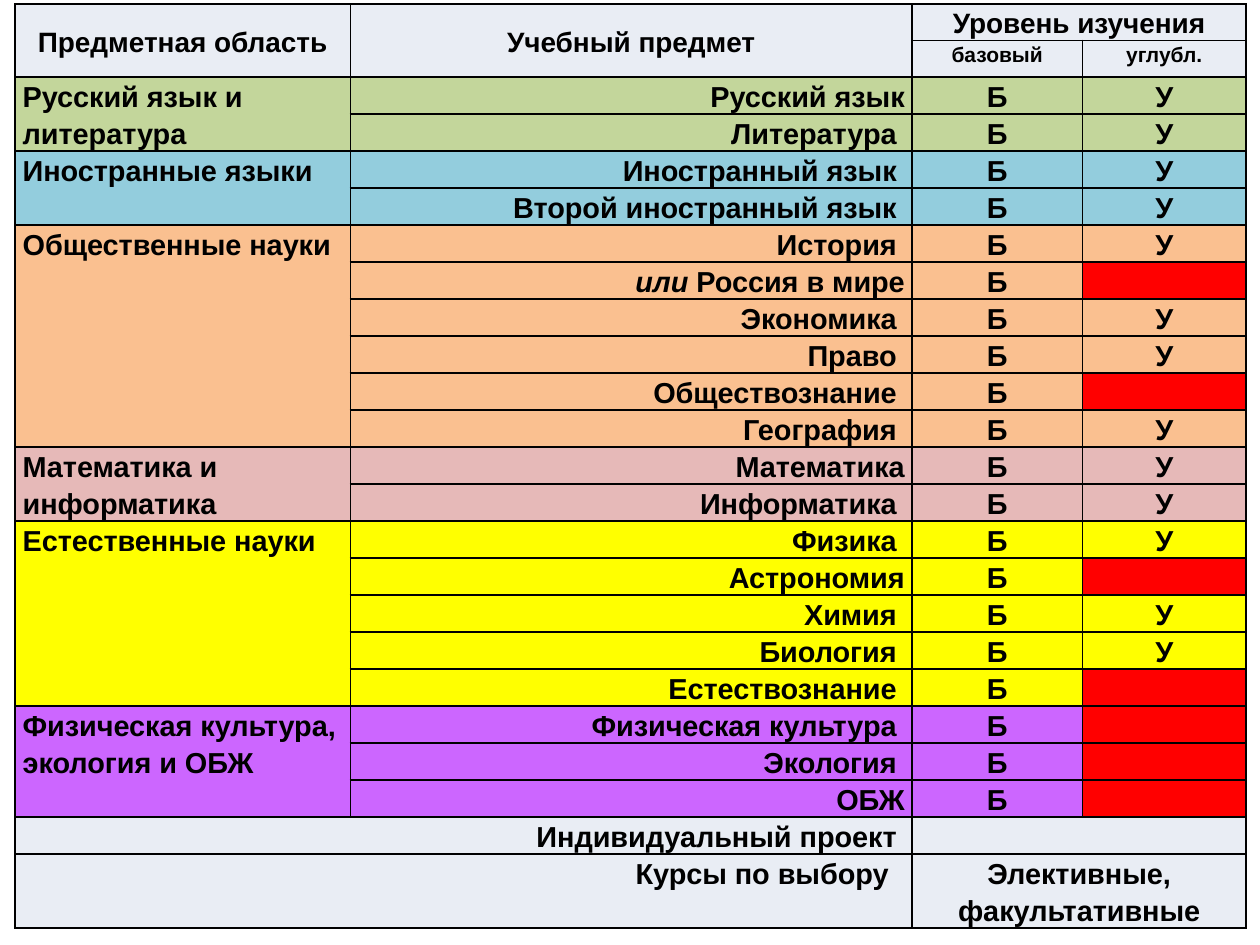
from lxml import etree
from pptx import Presentation
from pptx import util as u
from pptx.dml.color import RGBColor
from pptx.enum import text
from pptx.oxml import ns

COLORS = {
    "ink": "000000", "plain": "E9EDF4", "blocked": "FF0000",
    "green": "C3D69B", "blue": "93CDDD", "orange": "FAC090",
    "rose": "E6B9B8", "yellow": "FFFF00", "violet": "CC66FF",
}
FONT = "Arial"
BODY, HEADING, SMALL = 16.5, 16, 12
COLUMN_SHARES = (0.266, 0.446, 0.135, 0.13)
ROW_HEIGHT = 0.29
LEFT, CENTER, RIGHT = (text.PP_ALIGN.LEFT, text.PP_ALIGN.CENTER, text.PP_ALIGN.RIGHT)

AREAS = [
    ("Русский язык и литература", "green",
     [("Русский язык", "У"), ("Литература ", "У")]),
    ("Иностранные языки", "blue",
     [("Иностранный язык ", "У"), ("Второй иностранный язык ", "У")]),
    ("Общественные науки", "orange",
     [("История ", "У"), ("или| Россия в мире", ""), ("Экономика ", "У"),
      ("Право ", "У"), ("Обществознание ", ""), ("География ", "У")]),
    ("Математика и информатика", "rose",
     [("Математика", "У"), ("Информатика ", "У")]),
    ("Естественные науки", "yellow",
     [("Физика ", "У"), ("Астрономия", ""), ("Химия ", "У"),
      ("Биология ", "У"), ("Естествознание ", "")]),
    ("Физическая культура,\nэкология и ОБЖ", "violet",
     [("Физическая культура ", ""), ("Экология ", ""), ("ОБЖ", "")]),
]


def style_cell(cell, fill):
    """Give a cell its fill, insets, thin black borders and a compact empty line."""
    cell.fill.solid()
    cell.fill.fore_color.rgb = RGBColor.from_string(COLORS[fill])
    cell.margin_left = cell.margin_right = u.Inches(0.06)
    cell.margin_top = cell.margin_bottom = 0
    properties = cell._tc.get_or_add_tcPr()
    for index, side in enumerate(("lnL", "lnR", "lnT", "lnB")):
        line = etree.Element(ns.qn(f"a:{side}"), w=str(u.Pt(1)))
        paint = etree.SubElement(line, ns.qn("a:solidFill"))
        etree.SubElement(paint, ns.qn("a:srgbClr"), val=COLORS["ink"])
        properties.insert(index, line)
    para = cell.text_frame.paragraphs[0]
    etree.SubElement(para._p, ns.qn("a:endParaRPr"), sz=str(SMALL * 100))


def write_cell(cell, words, align, size=BODY):
    """Write bold lines into a cell; words before a bar are italic."""
    frame = cell.text_frame
    frame.text = words.replace("|", "")
    for para, line in zip(frame.paragraphs, words.split("\n")):
        para.alignment = align
        para.line_spacing = 1.15
        parts = line.split("|")
        para.runs[0].text = parts[0]
        for part in parts[1:]:
            para.add_run().text = part
        for index, span in enumerate(para.runs):
            span.font.name = FONT
            span.font.size = u.Pt(size)
            span.font.bold = True
            span.font.italic = index < len(parts) - 1
            span.font.color.rgb = RGBColor.from_string(COLORS["ink"])


def fill_header(table):
    """Fill the two heading rows."""
    for column, words in enumerate(("Предметная область", "Учебный предмет")):
        cell = table.cell(0, column)
        cell.merge(table.cell(1, column))
        cell.vertical_anchor = text.MSO_ANCHOR.MIDDLE
        write_cell(cell, words, CENTER, HEADING)
    table.cell(0, 2).merge(table.cell(0, 3))
    write_cell(table.cell(0, 2), "Уровень изучения", CENTER, HEADING)
    for column, words in enumerate(("базовый", "углубл."), start=2):
        write_cell(table.cell(1, column), words, CENTER, SMALL)


def fill_area(table, top, name, color, subjects):
    """Fill one subject area from its top row and return the next free row."""
    for row, (subject, advanced) in enumerate(subjects, start=top):
        fills = (color, color, color, color if advanced else "blocked")
        for column, fill in enumerate(fills):
            style_cell(table.cell(row, column), fill)
        write_cell(table.cell(row, 1), subject, RIGHT)
        write_cell(table.cell(row, 2), "Б", CENTER)
        if advanced:
            write_cell(table.cell(row, 3), advanced, CENTER)
    end = top + len(subjects)
    table.cell(top, 0).merge(table.cell(end - 1, 0))
    write_cell(table.cell(top, 0), name, LEFT)
    return end


def fill_footer(table, top):
    """Fill the two closing rows, each made of two wide cells."""
    for row in (top, top + 1):
        for column in (0, 2):
            table.cell(row, column).merge(table.cell(row, column + 1))
    write_cell(table.cell(top, 0), "Индивидуальный проект ", RIGHT)
    write_cell(table.cell(top + 1, 0), "Курсы по выбору  ", RIGHT)
    write_cell(table.cell(top + 1, 2), "Элективные, факультативные", CENTER)
    table.rows[top + 1].height = u.Inches(2 * ROW_HEIGHT)


def add_curriculum(page, left, top, slide_width):
    """Place the curriculum table with its corner at the given point."""
    count = 4 + sum(len(subjects) for _, _, subjects in AREAS)
    table = page.shapes.add_table(
        count, len(COLUMN_SHARES), left, top,
        int(slide_width * sum(COLUMN_SHARES)), u.Inches(ROW_HEIGHT * (count + 1))).table
    table.first_row = table.horz_banding = False
    for column, share in zip(table.columns, COLUMN_SHARES):
        column.width = int(slide_width * share)
    for row in table.rows:
        row.height = u.Inches(ROW_HEIGHT)
    for row in (0, 1, count - 2, count - 1):
        for column in range(len(COLUMN_SHARES)):
            style_cell(table.cell(row, column), "plain")
    fill_header(table)
    row = 2
    for name, color, subjects in AREAS:
        row = fill_area(table, row, name, color, subjects)
    fill_footer(table, row)


def main():
    """Build and save the one-slide deck."""
    deck = Presentation()
    deck.slide_width, deck.slide_height = u.Inches(10), u.Inches(7.5)
    page = deck.slides.add_slide(deck.slide_layouts[6])
    add_curriculum(page, u.Inches(0.12), u.Inches(0.03), deck.slide_width)
    deck.save("out.pptx")


if __name__ == "__main__":
    main()
